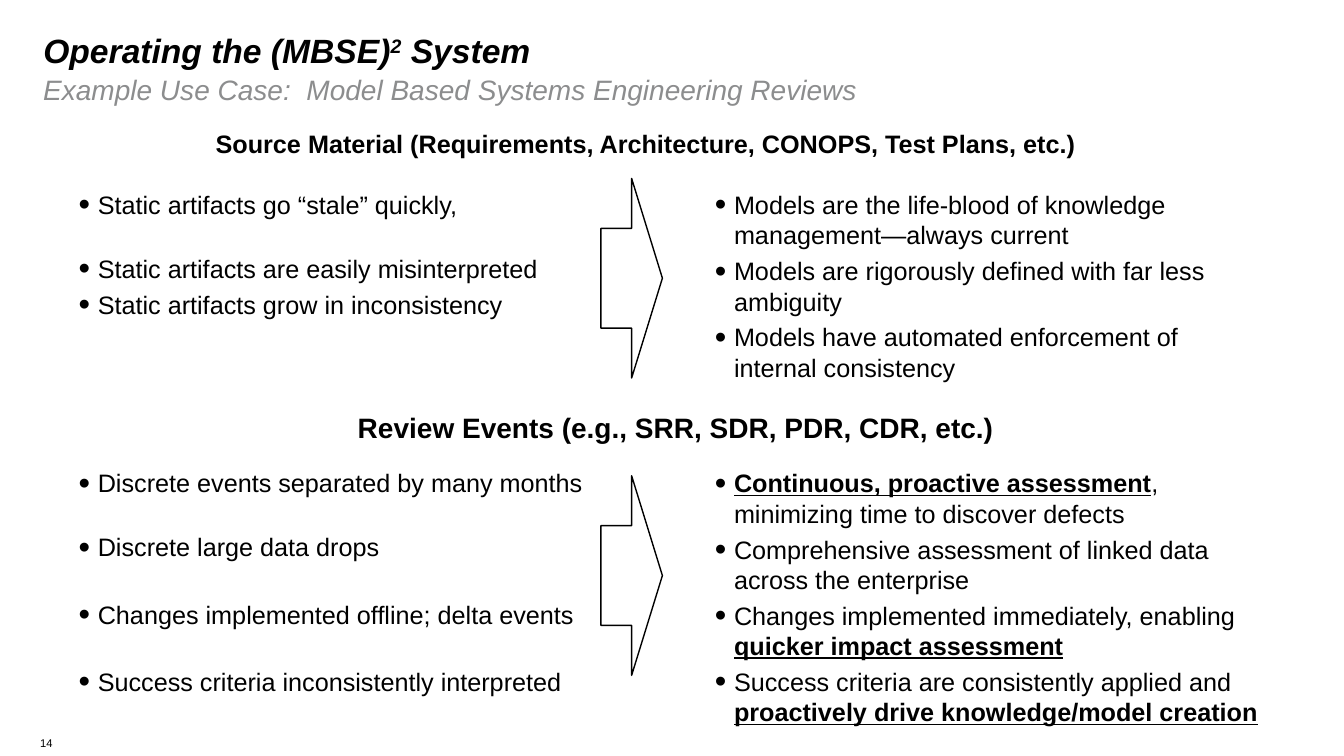
from lxml.etree import SubElement
from pptx import Presentation
from pptx.dml.color import RGBColor
from pptx.enum.shapes import MSO_SHAPE
from pptx.enum.text import MSO_ANCHOR, MSO_AUTO_SIZE, PP_ALIGN
from pptx.oxml.ns import qn
from pptx.util import Inches, Pt

BLACK = RGBColor(0x00, 0x00, 0x00)
WHITE = RGBColor(0xFF, 0xFF, 0xFF)
GRAY = RGBColor(0x8C, 0x8D, 0x8E)

LEFT_COLUMN, LEFT_WIDTH = 0.68, 5.23
RIGHT_COLUMN, RIGHT_WIDTH = 6.99, 5.67
MATERIAL_TOP, REVIEW_TOP = 1.83, 4.59
LIST_GAP = 4
BULLET_INDENT = 0.19


class SlideBuilder:
    def __init__(self, slide, font="Arial"):
        self.slide = slide
        self.font = font

    def place(self, box, left, top, width, height):
        box.left, box.top = Inches(left), Inches(top)
        box.width, box.height = Inches(width), Inches(height)

    def prepare_frame(self, box, wrap=True):
        frame = box.text_frame
        frame.word_wrap = wrap
        frame.auto_size = MSO_AUTO_SIZE.NONE
        frame.vertical_anchor = MSO_ANCHOR.TOP
        return frame

    def add_span(self, para, text, size, color=BLACK, bold=False, italic=False, underline=False):
        span = para.add_run()
        span.text = text
        font = span.font
        font.name, font.size = self.font, Pt(size)
        font.bold, font.italic, font.underline = bold, italic, underline
        font.color.rgb = color
        return span

    def title(self, pieces, place):
        """Write the title from (text, is_superscript) pieces."""
        box = self.slide.shapes.title
        self.place(box, *place)
        para = self.prepare_frame(box).paragraphs[0]
        para.alignment = PP_ALIGN.LEFT
        for text, superscript in pieces:
            span = self.add_span(para, text, 24, bold=True, italic=True)
            if superscript:
                span.font._element.set("baseline", "30000")

    def label(self, text, place, size, wrap=False, **style):
        box = self.slide.shapes.add_textbox(*map(Inches, place))
        para = self.prepare_frame(box, wrap).paragraphs[0]
        self.add_span(para, text, size, **style)

    def add_bullet(self, para):
        properties = para._p.get_or_add_pPr()
        properties.set("marL", str(Inches(BULLET_INDENT)))
        properties.set("indent", str(-Inches(BULLET_INDENT)))
        SubElement(properties, qn("a:buSzPct"), val="130000")
        SubElement(properties, qn("a:buFont"), typeface=self.font)
        SubElement(properties, qn("a:buChar"), char="•")

    def bullet_list(self, index, place, items):
        """Fill a body placeholder from (space_before, [(text, is_emphasised)]) items."""
        box = self.slide.placeholders[index]
        self.place(box, *place)
        frame = self.prepare_frame(box)
        for number, (gap, pieces) in enumerate(items):
            para = frame.add_paragraph() if number else frame.paragraphs[0]
            self.add_bullet(para)
            para.alignment = PP_ALIGN.LEFT
            para.space_before = Pt(gap)
            for text, emphasised in pieces:
                self.add_span(para, text, 18, bold=emphasised, underline=emphasised)

    def arrow(self, top):
        arrow = self.slide.shapes.add_shape(
            MSO_SHAPE.RIGHT_ARROW, Inches(5.96), Inches(top), Inches(0.61), Inches(1.98))
        arrow.shadow.inherit = False
        arrow.fill.solid()
        arrow.fill.fore_color.rgb = WHITE
        arrow.line.color.rgb = BLACK
        arrow.line.width = Pt(1)


def main():
    deck = Presentation()
    deck.slide_width, deck.slide_height = Inches(13.33), Inches(7.5)
    comparison_layout = deck.slide_layouts[4]
    page = SlideBuilder(deck.slides.add_slide(comparison_layout))

    page.title([("Operating the (MBSE)", False), ("2", True), (" System", False)],
               (0.33, 0.25, 11.53, 0.64))
    page.label("Example Use Case:  Model Based Systems Engineering Reviews",
               (0.33, 0.67, 11.53, 0.57), 20, wrap=True, color=GRAY, italic=True)

    page.label("Source Material (Requirements, Architecture, CONOPS, Test Plans, etc.)",
               (2.04, 1.22, 8.88, 0.4), 18, bold=True)
    page.bullet_list(1, (LEFT_COLUMN, MATERIAL_TOP, LEFT_WIDTH, 2.05), [
        (0, [("Static artifacts go “stale” quickly,", False)]),
        (24, [("Static artifacts are easily misinterpreted", False)]),
        (LIST_GAP, [("Static artifacts grow in inconsistency", False)]),
    ])
    page.bullet_list(2, (RIGHT_COLUMN, MATERIAL_TOP, RIGHT_WIDTH, 2.19), [
        (0, [("Models are the life-blood of knowledge management—always current", False)]),
        (LIST_GAP, [("Models are rigorously defined with far less ambiguity", False)]),
        (LIST_GAP, [("Models have automated enforcement of internal consistency", False)]),
    ])

    page.label("Review Events (e.g., SRR, SDR, PDR, CDR, etc.)",
               (3.45, 4.02, 6.5, 0.44), 20, bold=True)
    page.bullet_list(3, (LEFT_COLUMN, REVIEW_TOP, LEFT_WIDTH, 2.76), [
        (0, [("Discrete events separated by many months", False)]),
        (24, [("Discrete large data drops", False)]),
        (26.5, [("Changes implemented offline; delta events", False)]),
        (26.5, [("Success criteria inconsistently interpreted", False)]),
    ])
    page.bullet_list(4, (RIGHT_COLUMN, REVIEW_TOP, RIGHT_WIDTH, 2.76), [
        (0, [("Continuous, proactive assessment", True),
             (", minimizing time to discover defects", False)]),
        (LIST_GAP, [("Comprehensive assessment of linked data across the enterprise", False)]),
        (LIST_GAP, [("Changes implemented immediately, enabling ", False),
                    ("quicker impact assessment", True)]),
        (LIST_GAP, [("Success criteria are consistently applied and ", False),
                    ("proactively drive knowledge/model creation", True)]),
    ])

    for top in (1.77, 4.72):
        page.arrow(top)
    page.label("14", (0.3, 7.26, 1.01, 0.24), 8, wrap=True)

    deck.save("out.pptx")


if __name__ == "__main__":
    main()
